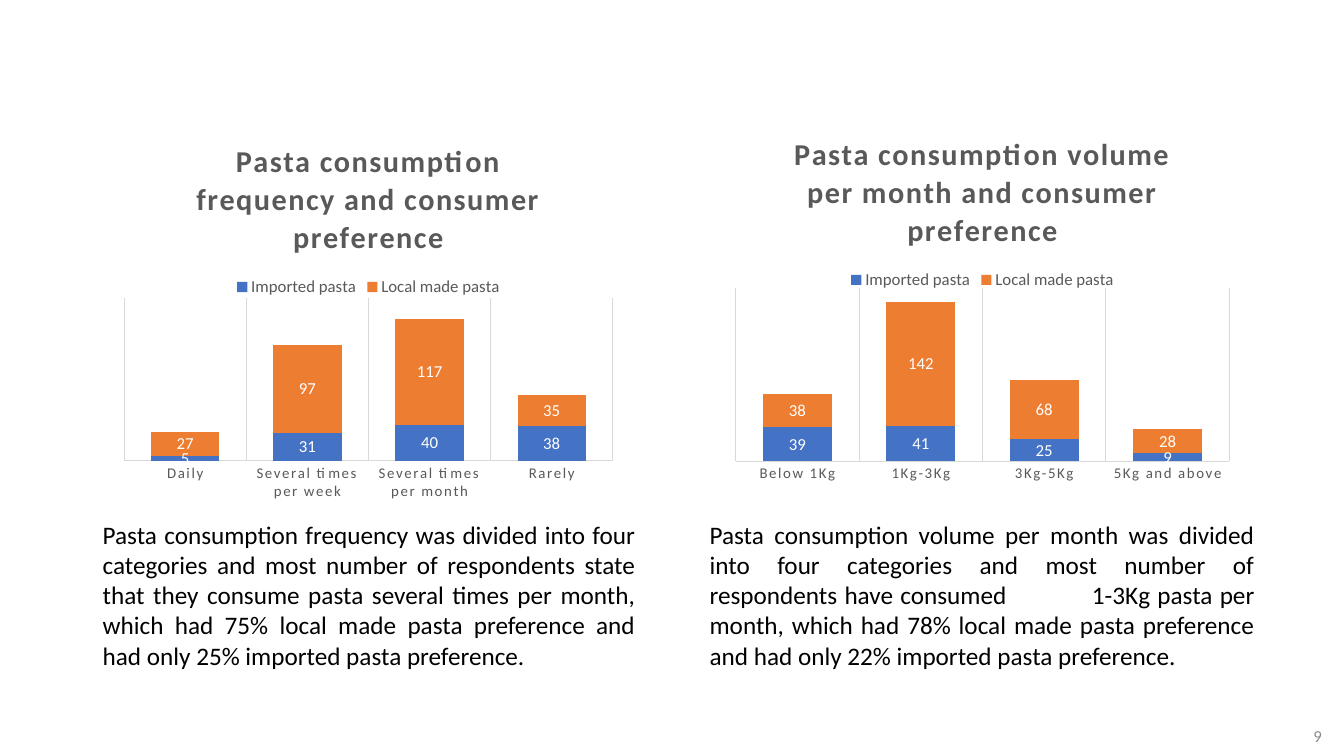
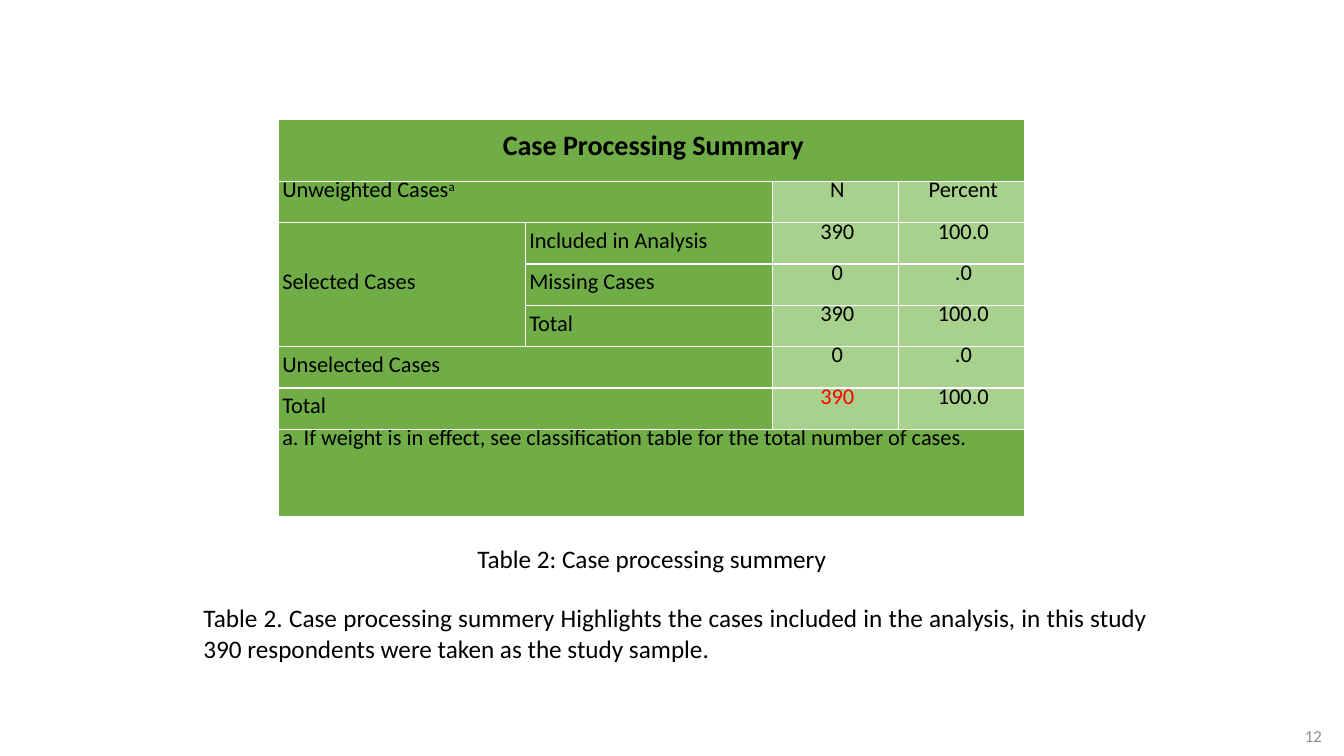
from lxml import etree
from pptx import Presentation
from pptx.chart.data import CategoryChartData
from pptx.dml.color import RGBColor
from pptx.enum.chart import XL_CHART_TYPE, XL_LABEL_POSITION, XL_LEGEND_POSITION, XL_TICK_MARK
from pptx.enum.text import MSO_ANCHOR, PP_ALIGN
from pptx.oxml import parse_xml
from pptx.oxml.ns import nsdecls, qn
from pptx.util import Emu, Pt

PX = 9144
FONT = "Calibri"
BLACK, WHITE, RED = "000000", "FFFFFF", "FF0000"
DARK_GREY, MID_GREY, LIGHT_GREY = "595959", "8C8C8C", "D9D9D9"
GREEN, PALE_GREEN = "70AD47", "A9D18E"
SERIES_COLORS = {"Imported pasta": "4472C4", "Local made pasta": "ED7D31"}
STACKED = XL_CHART_TYPE.COLUMN_STACKED
LABEL_CENTER = XL_LABEL_POSITION.CENTER
LEGEND_TOP = XL_LEGEND_POSITION.TOP
NO_TICK = XL_TICK_MARK.NONE
LEFT, CENTER, RIGHT, JUSTIFY = PP_ALIGN.LEFT, PP_ALIGN.CENTER, PP_ALIGN.RIGHT, PP_ALIGN.JUSTIFY
TOP, MIDDLE = MSO_ANCHOR.TOP, MSO_ANCHOR.MIDDLE

FREQUENCY_CHART = {
    "title": "Pasta consumption frequency and consumer preference",
    "categories": ["Daily", "Several times per week", "Several times per month", "Rarely"],
    "values": [[5, 31, 40, 38], [27, 97, 117, 35]],
    "maximum": 180,
    "plot": (0.02, 0.46, 0.96, 0.42),
}
VOLUME_CHART = {
    "title": "Pasta consumption volume per month and consumer preference",
    "categories": ["Below 1Kg", "1Kg-3Kg", "3Kg-5Kg", "5Kg and above"],
    "values": [[39, 41, 25, 9], [38, 142, 68, 28]],
    "maximum": 200,
    "plot": (0.03, 0.45, 0.94, 0.45),
}
FREQUENCY_TEXT = (
    "Pasta consumption frequency was divided into four categories and most number of "
    "respondents state that they consume pasta several times per month, which had 75% local "
    "made pasta preference and had only 25% imported pasta preference."
)
VOLUME_TEXT = (
    "Pasta consumption volume per month was divided into four categories and most number of "
    "respondents have consumed\t1-3Kg pasta per month, which had 78% local made pasta "
    "preference and had only 22% imported pasta preference."
)
SUMMARY_TEXT = (
    "Table 2. Case processing summery Highlights the cases included in the analysis, in this "
    "study 390 respondents were taken as the study sample."
)
FOOTNOTE = "a. If weight is in effect, see classification table for the total number of cases."
CASE_ROWS = [
    ["Case Processing Summary", "", "", ""],
    ["Unweighted Cases", "", "N", "Percent"],
    ["Selected Cases", "Included in Analysis", "390", "100.0"],
    ["", "Missing Cases", "0", ".0"],
    ["", "Total", "390", "100.0"],
    ["Unselected Cases", "", "0", ".0"],
    ["Total", "", "390", "100.0"],
    [FOOTNOTE, "", "", ""],
]
CASE_MERGES = [(0, 0, 0, 3), (1, 0, 1, 1), (2, 0, 4, 0), (5, 0, 5, 1), (6, 0, 6, 1), (7, 0, 7, 3)]
COLUMN_WIDTHS = [245, 245, 125, 125]
ROW_HEIGHTS = [62] + [41] * 6 + [87]


def color(value):
    """Turn a hex string into a colour."""
    return RGBColor.from_string(value)


def lengths(*pixels):
    """Turn pixel lengths into EMU."""
    return [Emu(pixel * PX) for pixel in pixels]


def style_font(font, size, ink, bold=False, spacing=None):
    """Set the typeface, size, colour, weight and letter spacing of a font."""
    font.name, font.size, font.bold = FONT, Pt(size), bold
    font.color.rgb = color(ink)
    if spacing:
        font._rPr.set("spc", str(spacing))


def add_text(page, area, text, size=18, ink=BLACK, align=JUSTIFY, anchor=TOP, tab=None):
    """Add a wrapped text box with one paragraph."""
    frame = page.shapes.add_textbox(*lengths(*area)).text_frame
    frame.word_wrap = True
    frame.vertical_anchor = anchor
    para = frame.paragraphs[0]
    para.add_run().text = text
    para.alignment = align
    if tab:
        tabs = etree.SubElement(para._p.get_or_add_pPr(), qn("a:tabLst"))
        etree.SubElement(tabs, qn("a:tab"), pos=str(tab * PX), algn="l")
    style_font(para.font, size, ink)


def add_page(deck, number):
    """Add a blank page with its page number."""
    page = deck.slides.add_slide(deck.slide_layouts[6])
    add_text(page, (1021, 710, 300, 40), str(number), 12, MID_GREY, RIGHT, MIDDLE)
    return page


def place_plot(chart, plot):
    """Fix the inner plot area as fractions of the chart."""
    area = chart._chartSpace.chart.plotArea
    for layout in area.findall(qn("c:layout")):
        area.remove(layout)
    sizes = "".join(f'<c:{tag} val="{size}"/>' for tag, size in zip("xywh", plot))
    area.insert(0, parse_xml(
        f'<c:layout {nsdecls("c")}><c:manualLayout><c:layoutTarget val="inner"/>'
        f'<c:xMode val="edge"/><c:yMode val="edge"/>{sizes}</c:manualLayout></c:layout>'
    ))


def style_axes(chart, maximum):
    """Hide the value axis and draw the category axis in grey."""
    values, categories = chart.value_axis, chart.category_axis
    values.visible = values.has_major_gridlines = False
    values.minimum_scale, values.maximum_scale = 0, maximum
    categories.has_major_gridlines = True
    categories.major_tick_mark = categories.minor_tick_mark = NO_TICK
    for line in (categories.format.line, categories.major_gridlines.format.line):
        line.color.rgb = color(LIGHT_GREY)
        line.width = Pt(0.75)
    style_font(categories.tick_labels.font, 10.6, DARK_GREY, spacing=120)


def add_preference_chart(page, area, content):
    """Add a stacked column chart of pasta preference."""
    data = CategoryChartData()
    data.categories = content["categories"]
    for name, values in zip(SERIES_COLORS, content["values"]):
        data.add_series(name, values)
    chart = page.shapes.add_chart(STACKED, *lengths(*area), data).chart
    style_font(chart.font, 10, BLACK)
    title = chart.chart_title.text_frame.paragraphs[0]
    title.add_run().text = content["title"]
    style_font(title.font, 21.6, DARK_GREY, True, 100)
    chart.has_legend = True
    chart.legend.position = LEGEND_TOP
    chart.legend.include_in_layout = False
    style_font(chart.legend.font, 12, DARK_GREY)
    style_axes(chart, content["maximum"])
    columns = chart.plots[0]
    columns.gap_width, columns.overlap = 79, 100
    columns.vary_by_categories = False
    for series, fill in zip(columns.series, SERIES_COLORS.values()):
        series.format.fill.solid()
        series.format.fill.fore_color.rgb = color(fill)
        labels = series.data_labels
        labels.show_value = True
        labels.position = LABEL_CENTER
        style_font(labels.font, 12, WHITE)
    place_plot(chart, content["plot"])


def style_cell(cell, fill):
    """Give a cell white borders, a fill and tight margins."""
    properties = cell._tc.get_or_add_tcPr()
    for side in "LRTB":
        properties.append(parse_xml(
            f'<a:ln{side} {nsdecls("a")} w="12700"><a:solidFill>'
            f'<a:srgbClr val="{WHITE}"/></a:solidFill></a:ln{side}>'
        ))
    cell.fill.solid()
    cell.fill.fore_color.rgb = color(fill)
    cell.margin_left, cell.margin_right, cell.margin_top, cell.margin_bottom = lengths(4, 0, 0, 0)


def write_cell(cell, text, size=16, ink=BLACK, align=LEFT, bold=False):
    """Write one paragraph with fixed line spacing into a cell."""
    para = cell.text_frame.paragraphs[0]
    para.add_run().text = text
    para.alignment = align
    para.line_spacing = Pt(16)
    style_font(para.font, size, ink, bold)
    return para


def add_case_table(page, left, top):
    """Add the table of processed cases."""
    area = lengths(left, top, sum(COLUMN_WIDTHS), sum(ROW_HEIGHTS))
    table = page.shapes.add_table(len(ROW_HEIGHTS), len(COLUMN_WIDTHS), *area).table
    table.first_row = table.horz_banding = False
    for column, width in zip(table.columns, lengths(*COLUMN_WIDTHS)):
        column.width = width
    for row, height in zip(table.rows, lengths(*ROW_HEIGHTS)):
        row.height = height
    last = len(CASE_ROWS) - 1
    for i, texts in enumerate(CASE_ROWS):
        for j, text in enumerate(texts):
            cell = table.cell(i, j)
            is_value = j > 1 and 0 < i < last
            style_cell(cell, PALE_GREEN if is_value else GREEN)
            if not text:
                continue
            if i == 0:
                write_cell(cell, text, 20, align=CENTER, bold=True)
                cell.margin_top = Emu(22 * PX)
            elif is_value:
                write_cell(cell, text, ink=RED if (i, j) == (last - 1, 2) else BLACK, align=CENTER)
            else:
                para = write_cell(cell, text)
                if i == 1:
                    span = para.add_run()
                    span.text = "a"
                    span.font._rPr.set("baseline", "30000")
                elif i < last:
                    cell.vertical_anchor = MIDDLE
    for first_row, first_column, last_row, last_column in CASE_MERGES:
        table.cell(first_row, first_column).merge(table.cell(last_row, last_column))


def main():
    """Build the deck and save it."""
    deck = Presentation()
    deck.slide_width, deck.slide_height = lengths(1333, 750)

    page = add_page(deck, 9)
    add_preference_chart(page, (113, 120, 505, 383), FREQUENCY_CHART)
    add_preference_chart(page, (714, 113, 521, 383), VOLUME_CHART)
    add_text(page, (92, 510, 548, 162), FREQUENCY_TEXT)
    add_text(page, (694, 510, 560, 162), VOLUME_TEXT, tab=376)

    page = add_page(deck, 12)
    add_case_table(page, 276, 118)
    add_text(page, (394, 534, 505, 40), "Table 2: Case processing summery", align=CENTER)
    add_text(page, (192, 593, 956, 71), SUMMARY_TEXT)

    deck.save("out.pptx")


if __name__ == "__main__":
    main()
